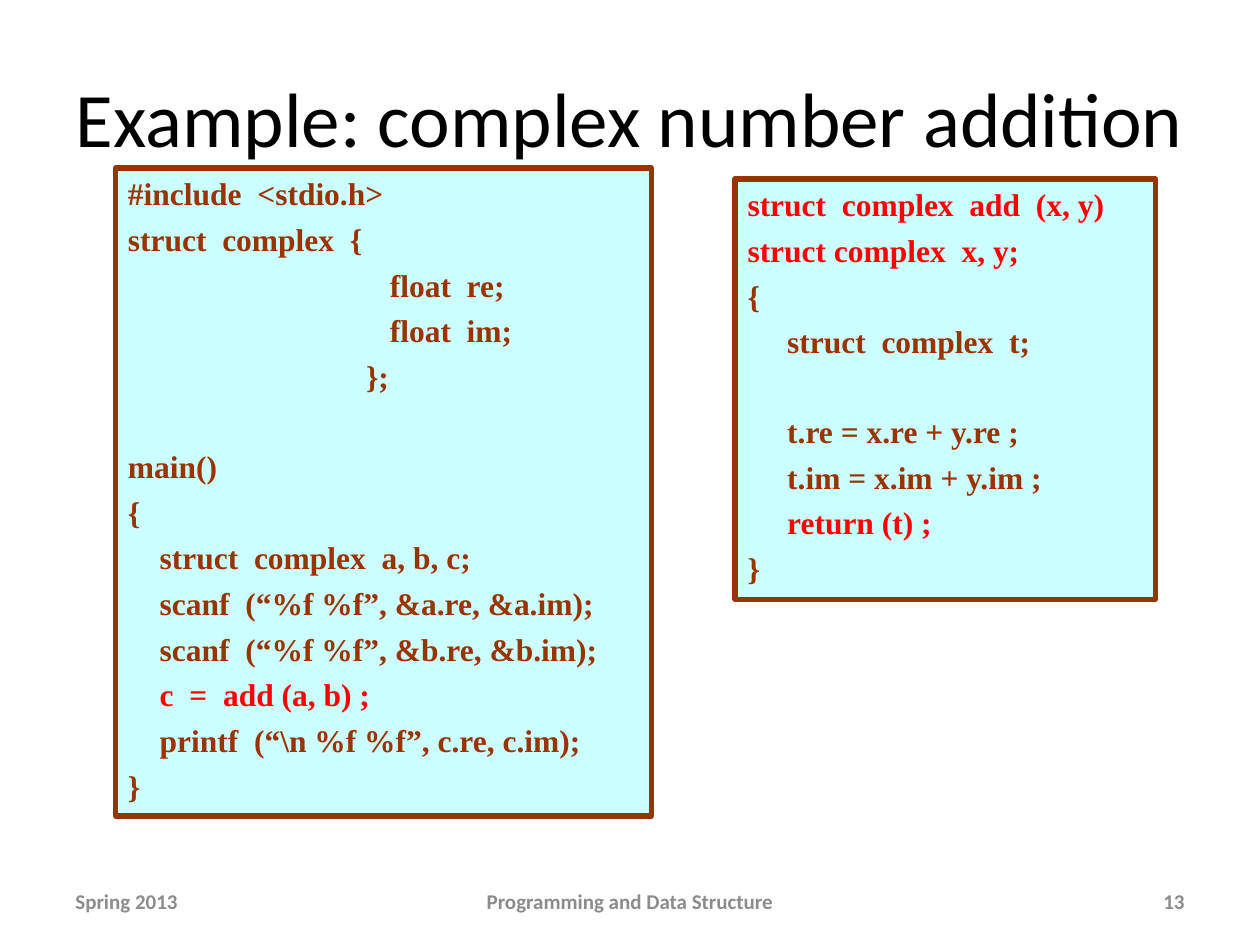
from dataclasses import dataclass

from pptx import Presentation
from pptx import util as u
from pptx.dml.color import RGBColor
from pptx.enum import shapes, text


@dataclass(frozen=True)
class Theme:
    heading_font: str = "Calibri"
    code_font: str = "Times New Roman"
    black: str = "000000"
    grey: str = "8C8C8C"
    brown: str = "993300"
    red: str = "FF0000"
    cyan: str = "CCFFFF"
    title_size: float = 44
    code_size: float = 18
    footer_size: float = 12
    code_gap: float = 4.5    # points before each code line
    blank_line: float = 25.2  # extra points where a line is skipped
    border: float = 3


THEME = Theme()
SPACE = 0.16  # width of one indent column in cm

# Code lines: (indent columns, text, colour, line skipped before)
MAIN_PROGRAM = [
    (0, "#include  <stdio.h>", THEME.brown, False),
    (0, "struct  complex  {", THEME.brown, False),
    (33, "float  re;", THEME.brown, False),
    (33, "float  im;", THEME.brown, False),
    (30, "};", THEME.brown, False),
    (0, "main()", THEME.brown, True),
    (0, "{", THEME.brown, False),
    (4, "struct  complex  a, b, c;", THEME.brown, False),
    (4, "scanf  (“%f %f”, &a.re, &a.im);", THEME.brown, False),
    (4, "scanf  (“%f %f”, &b.re, &b.im);", THEME.brown, False),
    (4, "c  =  add (a, b) ;", THEME.red, False),
    (4, "printf  (“\\n %f %f”, c.re, c.im);", THEME.brown, False),
    (0, "}", THEME.brown, False),
]
ADD_FUNCTION = [
    (0, "struct  complex  add  (x, y)", THEME.red, False),
    (0, "struct complex  x, y;", THEME.red, False),
    (0, "{", THEME.brown, False),
    (5, "struct  complex  t;", THEME.brown, False),
    (5, "t.re = x.re + y.re ;", THEME.brown, True),
    (5, "t.im = x.im + y.im ;", THEME.brown, False),
    (5, "return (t) ;", THEME.red, False),
    (0, "}", THEME.brown, False),
]


def write(paragraph, words, *, font, size, color, bold=False,
          align=text.PP_ALIGN.LEFT, before=0, indent=0):
    """Write one formatted run into a paragraph."""
    paragraph.alignment = align
    paragraph.space_before = u.Pt(before)
    properties = paragraph._p.get_or_add_pPr()
    properties.set("marL", str(u.Cm(indent)))
    properties.set("indent", "0")
    run = paragraph.add_run()
    run.text = words
    run.font.name = font
    run.font.size = u.Pt(size)
    run.font.bold = bold
    run.font.color.rgb = RGBColor.from_string(color)


def add_label(slide, place, words, **style):
    """Add a vertically centred single line of text."""
    frame = slide.shapes.add_textbox(*map(u.Cm, place)).text_frame
    frame.word_wrap = True
    frame.vertical_anchor = text.MSO_ANCHOR.MIDDLE
    write(frame.paragraphs[0], words, **style)


def add_code_box(slide, place, lines):
    """Add a bordered panel holding a code listing."""
    panel = slide.shapes.add_shape(
        shapes.MSO_SHAPE.RECTANGLE, *map(u.Cm, place))
    panel.shadow.inherit = False
    panel.fill.solid()
    panel.fill.fore_color.rgb = RGBColor.from_string(THEME.cyan)
    panel.line.color.rgb = RGBColor.from_string(THEME.brown)
    panel.line.width = u.Pt(THEME.border)
    frame = panel.text_frame
    frame.word_wrap = True
    frame.vertical_anchor = text.MSO_ANCHOR.TOP
    for number, (columns, code, color, skipped) in enumerate(lines):
        paragraph = frame.add_paragraph() if number else frame.paragraphs[0]
        write(paragraph, code, font=THEME.code_font, size=THEME.code_size,
              color=color, bold=True, indent=columns * SPACE,
              before=THEME.code_gap + skipped * THEME.blank_line)


def main():
    deck = Presentation()
    deck.slide_width, deck.slide_height = u.Cm(25.4), u.Cm(19.05)
    slide = deck.slides.add_slide(deck.slide_layouts[6])

    # Title
    add_label(slide, (1.27, 0.76, 22.86, 3.18),
              "Example: complex number addition",
              font=THEME.heading_font, size=THEME.title_size,
              color=THEME.black, align=text.PP_ALIGN.CENTER)

    # Footer
    footer = [
        (1.27, 5.93, "Spring 2013", text.PP_ALIGN.LEFT),
        (8.68, 8.04, "Programming and Data Structure", text.PP_ALIGN.CENTER),
        (18.2, 5.93, "13", text.PP_ALIGN.RIGHT),
    ]
    for left, width, words, align in footer:
        add_label(slide, (left, 17.66, width, 1.01), words,
                  font=THEME.heading_font, size=THEME.footer_size,
                  color=THEME.grey, bold=True, align=align)

    # Code listings
    add_code_box(slide, (2.33, 3.39, 10.8, 13.06), MAIN_PROGRAM)
    add_code_box(slide, (14.82, 3.61, 8.47, 8.47), ADD_FUNCTION)

    deck.save("out.pptx")


if __name__ == "__main__":
    main()
